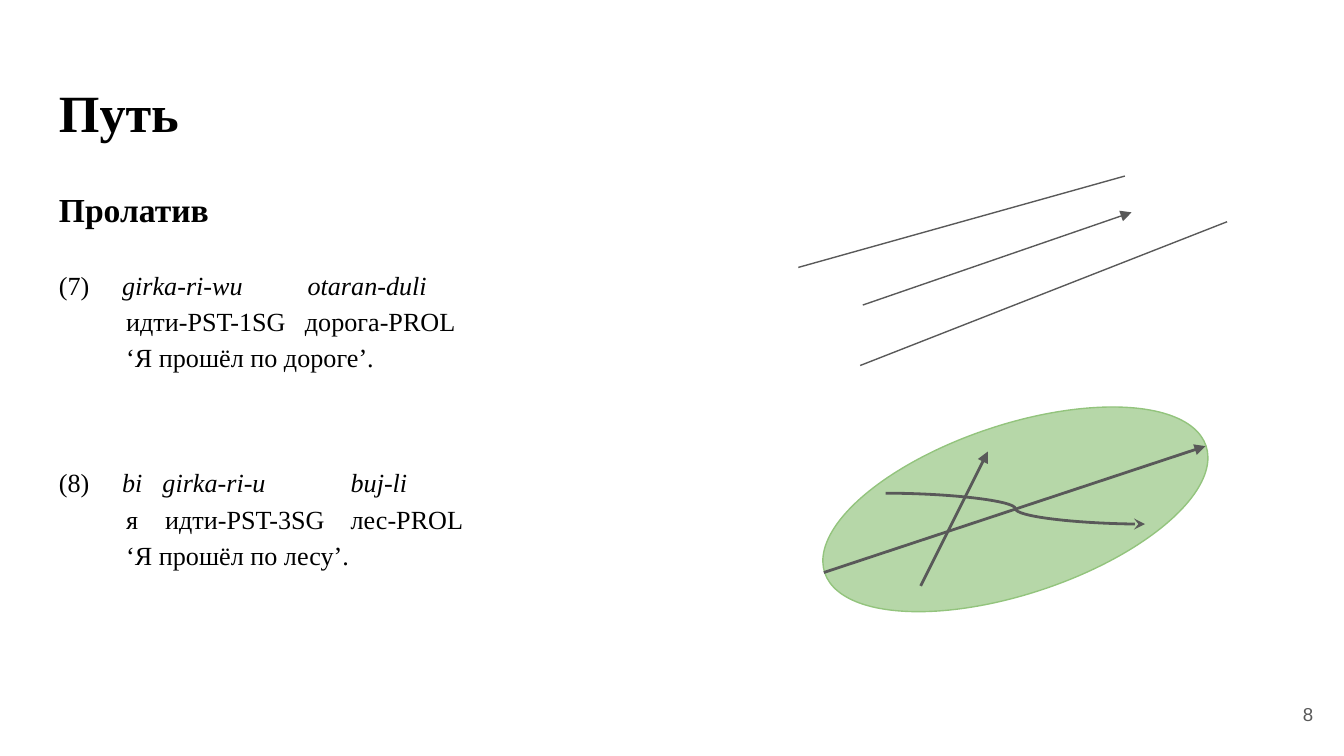
from lxml.etree import SubElement
from pptx import Presentation
from pptx.dml.color import RGBColor
from pptx.enum.shapes import MSO_CONNECTOR as CONN, MSO_SHAPE
from pptx.enum.text import MSO_ANCHOR as ANCHOR, PP_ALIGN as ALIGN
from pptx.oxml.ns import qn
from pptx.util import Inches, Pt

SERIF = "Times New Roman"
GREY = "595959"

prs = Presentation()
prs.slide_width, prs.slide_height = Inches(10), Inches(10 * 9 / 16)
s = prs.slides.add_slide(prs.slide_layouts[6])


def rgb(color):
    return RGBColor.from_string(color)


def add_text(box, lines, anchor=ANCHOR.TOP):
    """Each line: runs of (text, italic), size, font, colour, bold, paragraph settings."""
    tf = s.shapes.add_textbox(*map(Inches, box)).text_frame
    tf.word_wrap = True
    tf.vertical_anchor = anchor
    tf.margin_left = tf.margin_right = tf.margin_top = tf.margin_bottom = Inches(0.1)
    for i, (runs, size, font, color, bold, para) in enumerate(lines):
        p = tf.paragraphs[0] if i == 0 else tf.add_paragraph()
        p.alignment = para.get("align", ALIGN.LEFT)
        p.line_spacing = para.get("spacing", 1.0)
        p.space_before = Pt(para.get("before", 0))
        pPr = p._p.get_or_add_pPr()
        if "indent" in para:
            pPr.set("marL", "0")
            pPr.set("indent", str(Inches(para["indent"])))
        if "tabs" in para:
            stops = SubElement(pPr, qn("a:tabLst"))
            for pos in para["tabs"]:
                SubElement(stops, qn("a:tab"), pos=str(Inches(pos)), algn="l")
        for text, italic in runs:
            r = p.add_run()
            r.text = text
            r.font.size, r.font.name = Pt(size), font
            r.font.bold, r.font.italic = bold, italic
            r.font.color.rgb = rgb(color)


# Title
add_text((0.34, 0.5, 9.32, 0.63), [([("Путь", False)], 28, SERIF, "000000", True, {})])

# Examples: number, words and their tab stops, glosses and theirs, translation, gap above
examples = [
    ("(7)", ["girka-ri-wu", "otaran-duli"], [0.47, 1.85],
     ["идти-PST-1SG", "дорога-PROL"], [0.5, 1.83],
     "‘Я прошёл по дороге’.", 19),
    ("(8)", ["bi", "girka-ri-u", "buj-li"], [0.47, 0.77, 2.17],
     ["я", "идти-PST-3SG", "лес-PROL"], [0.5, 0.79, 2.17],
     "‘Я прошёл по лесу’.", 48),
]
lines = [([("Пролатив", False)], 18, SERIF, "000000", True, {"spacing": 1.15})]
for number, words, word_tabs, glosses, gloss_tabs, meaning, gap in examples:
    rows = [
        ([(number + "\t", False), ("\t".join(words), True)],
         {"before": gap, "tabs": word_tabs}),
        ([("\t" + "\t".join(glosses), False)], {"tabs": gloss_tabs}),
        ([(meaning, False)], {"indent": 0.5}),
    ]
    for runs, para in rows:
        lines.append((runs, 14, SERIF, "000000", False, {"spacing": 1.15, **para}))
add_text((0.34, 1.26, 9.32, 4.17), lines)

# Forest
forest = s.shapes.add_shape(MSO_SHAPE.OVAL, *map(Inches, (6.06, 3.16, 2.99, 1.26)))
forest.rotation = -18.4
forest.shadow.inherit = False
forest.fill.solid()
forest.fill.fore_color.rgb = rgb("B6D7A8")
forest.line.color.rgb = rgb("93C47D")
forest.line.width = Pt(0.75)

# Road edges, the way along the road, and the ways through the forest
paths = [
    (CONN.STRAIGHT, (5.94, 1.99, 8.37, 1.31), 0.75, None),
    (CONN.STRAIGHT, (6.4, 2.72, 9.13, 1.65), 0.75, None),
    (CONN.STRAIGHT, (6.42, 2.27, 8.42, 1.58), 0.75, "triangle"),
    (CONN.STRAIGHT, (6.13, 4.26, 8.97, 3.32), 1.5, "triangle"),
    (CONN.CURVE, (6.59, 3.67, 8.52, 3.9), 1.5, "stealth"),
    (CONN.STRAIGHT, (6.85, 4.36, 7.35, 3.36), 1.5, "triangle"),
]
for kind, ends, width, arrow in paths:
    sp = s.shapes.add_connector(kind, *map(Inches, ends))
    sp.line.color.rgb = rgb(GREY)
    sp.line.width = Pt(width)
    if arrow:
        SubElement(sp.line._get_or_add_ln(), qn("a:tailEnd"), type=arrow)
    SubElement(sp._element.spPr, qn("a:effectLst"))

# Slide number
add_text((9.27, 5.1, 0.6, 0.43),
         [([("8", False)], 10, "Arial", GREY, False, {"align": ALIGN.RIGHT})],
         ANCHOR.MIDDLE)

prs.save("out.pptx")
